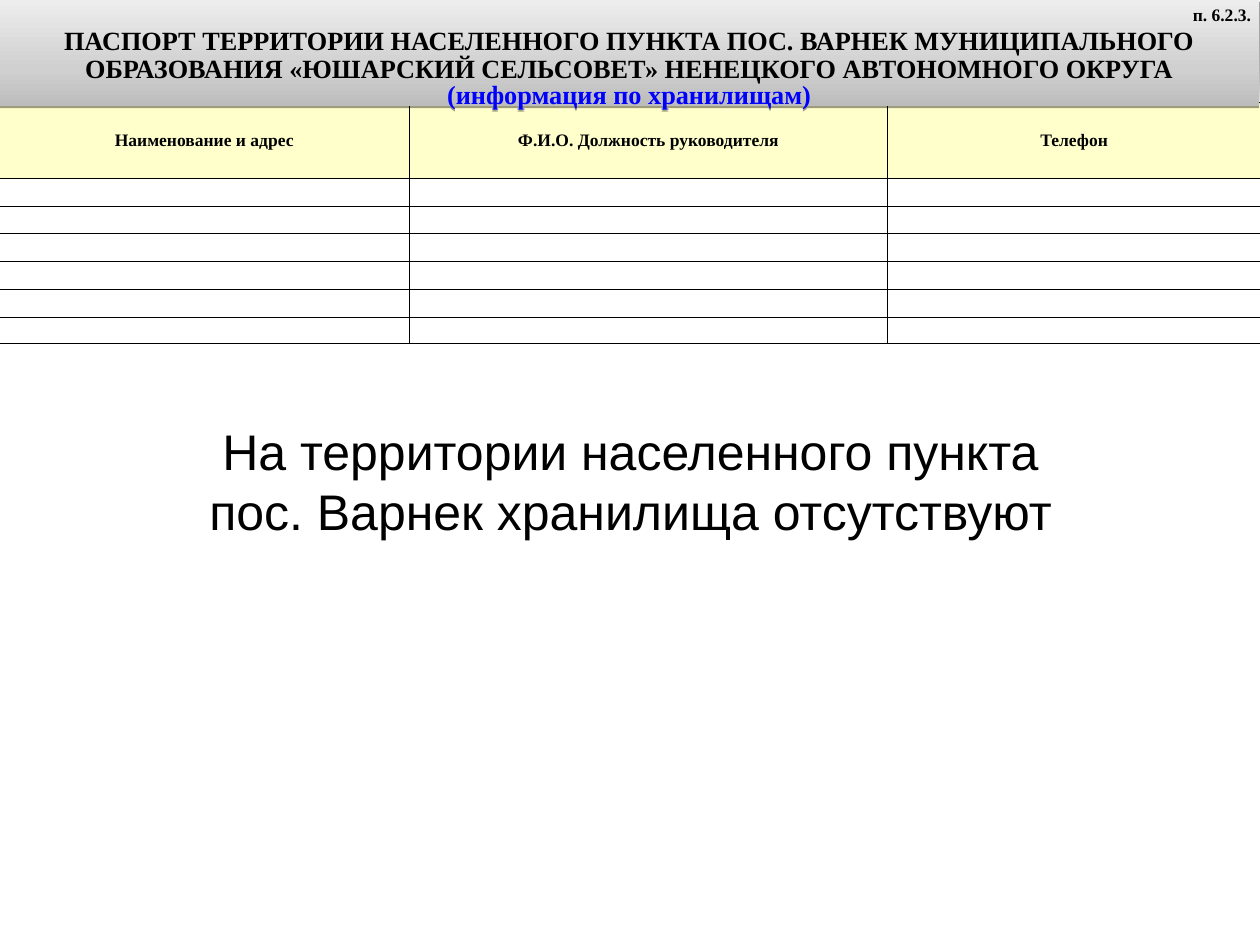
from lxml import etree
from pptx import Presentation
from pptx.dml.color import RGBColor
from pptx.enum.text import MSO_ANCHOR, MSO_AUTO_SIZE, PP_ALIGN
from pptx.oxml import parse_xml
from pptx.oxml.ns import nsdecls, qn
from pptx.util import Inches, Pt

CENTER, RIGHT = PP_ALIGN.CENTER, PP_ALIGN.RIGHT
TOP, MIDDLE = MSO_ANCHOR.TOP, MSO_ANCHOR.MIDDLE
NO_AUTOFIT = MSO_AUTO_SIZE.NONE
SERIF, SANS = "Times New Roman", "Arial"
TITLE = (
    "ПАСПОРТ ТЕРРИТОРИИ НАСЕЛЕННОГО ПУНКТА ПОС. ВАРНЕК МУНИЦИПАЛЬНОГО "
    "ОБРАЗОВАНИЯ «ЮШАРСКИЙ СЕЛЬСОВЕТ» НЕНЕЦКОГО АВТОНОМНОГО ОКРУГА"
)
HEADINGS = ["Наименование и адрес", "Ф.И.О. Должность руководителя", "Телефон"]
COLUMN_WIDTHS = [4.56, 5.31, 4.15]
ROW_HEIGHTS = [0.84] + [0.31] * 5 + [0.29]
BANNER_STOPS = [(0, "BCBCBC"), (35, "D0D0D0"), (100, "EDEDED")]


def rgb(value):
    return RGBColor.from_string(value)


def write(paragraph, text, size=14, font=SERIF, color="000000", bold=False,
          align=CENTER, spacing=None):
    paragraph.alignment = align
    paragraph.space_before = Pt(0)
    if spacing:
        paragraph.line_spacing = spacing
    run = paragraph.add_run()
    run.text = text
    run.font.size = Pt(size)
    run.font.name = font
    run.font.bold = bold
    run.font.color.rgb = rgb(color)


def add_borders(cell):
    properties = cell._tc.get_or_add_tcPr()
    for side in ("lnL", "lnR", "lnT", "lnB"):
        properties.append(parse_xml(
            f'<a:{side} {nsdecls("a")} w="{Pt(1)}"><a:solidFill>'
            f'<a:srgbClr val="000000"/></a:solidFill></a:{side}>'))


def add_storage_table(slide):
    table = slide.shapes.add_table(
        len(ROW_HEIGHTS), len(COLUMN_WIDTHS), Inches(-0.01), Inches(1.14),
        Inches(sum(COLUMN_WIDTHS)), Inches(sum(ROW_HEIGHTS))).table
    table.horz_banding = False
    for column, width in zip(table.columns, COLUMN_WIDTHS):
        column.width = Inches(width)
    for index, height in enumerate(ROW_HEIGHTS):
        table.rows[index].height = Inches(height)
        for cell, heading in zip(table.rows[index].cells, HEADINGS):
            cell.margin_left = cell.margin_right = Inches(0.03)
            cell.margin_top = cell.margin_bottom = Inches(0.03)
            cell.vertical_anchor = MIDDLE
            add_borders(cell)
            cell.fill.solid()
            cell.fill.fore_color.rgb = rgb("FFFFFF" if index else "FFFFCC")
            paragraph = cell.text_frame.paragraphs[0]
            if index:
                etree.SubElement(paragraph._p, qn("a:endParaRPr"), sz="1200")
            else:
                write(paragraph, heading, bold=True)


def style_banner(banner):
    stops = "".join(
        f'<a:gs pos="{position * 1000}"><a:srgbClr val="{color}"/></a:gs>'
        for position, color in BANNER_STOPS)
    properties = banner._element.spPr
    properties.append(parse_xml(
        f'<a:gradFill {nsdecls("a")} rotWithShape="1"><a:gsLst>{stops}</a:gsLst>'
        '<a:lin ang="16200000" scaled="0"/></a:gradFill>'))
    banner.line.fill.background()
    properties.append(parse_xml(
        f'<a:effectLst {nsdecls("a")}><a:outerShdw dist="{Pt(1.6)}" dir="5400000" '
        'rotWithShape="0"><a:srgbClr val="000000"><a:alpha val="38000"/>'
        '</a:srgbClr></a:outerShdw></a:effectLst>'))


def add_banner(slide):
    banner = slide.shapes.title
    banner.left, banner.top = Inches(-0.01), Inches(0)
    banner.width, banner.height = Inches(14), Inches(1.18)
    style_banner(banner)
    frame = banner.text_frame
    frame.word_wrap = True
    frame.auto_size = NO_AUTOFIT
    frame.vertical_anchor = TOP
    frame.margin_left = frame.margin_right = Inches(0.1)
    frame.margin_top, frame.margin_bottom = Inches(0.31), Inches(0)
    write(frame.paragraphs[0], TITLE, size=21, bold=True, spacing=0.9)
    write(frame.add_paragraph(), "(информация по хранилищам)", size=21,
          color="0000FF", bold=True, spacing=0.8)
    slide.shapes._spTree.append(banner._element)


def add_text(slide, left, top, width, height, lines, **style):
    frame = slide.shapes.add_textbox(
        Inches(left), Inches(top), Inches(width), Inches(height)).text_frame
    frame.word_wrap = True
    for index, line in enumerate(lines):
        paragraph = frame.add_paragraph() if index else frame.paragraphs[0]
        write(paragraph, line, **style)


def main():
    presentation = Presentation()
    presentation.slide_width = Inches(14)
    presentation.slide_height = Inches(10.5)
    slide = presentation.slides.add_slide(presentation.slide_layouts[5])
    add_storage_table(slide)
    add_banner(slide)
    add_text(slide, 13.06, 0, 0.94, 0.33, ["п. 6.2.3."], bold=True, align=RIGHT)
    add_text(slide, 0.39, 4.62, 13.23, 1.45,
             ["На территории населенного пункта",
              "пос. Варнек хранилища отсутствуют"], size=40, font=SANS)
    presentation.save("out.pptx")


if __name__ == "__main__":
    main()
